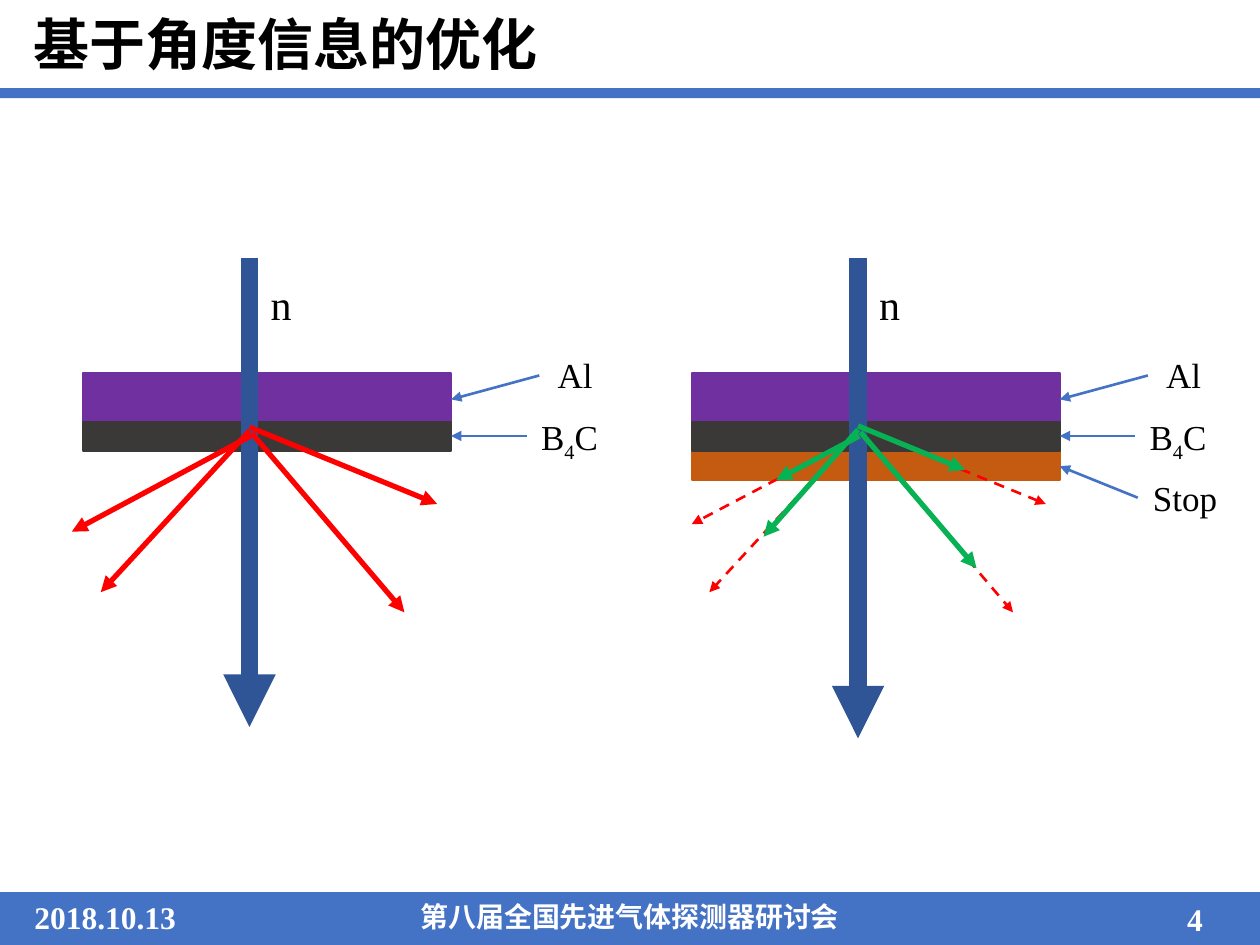
from lxml import etree
from pptx import Presentation
from pptx.dml.color import RGBColor
from pptx.enum.dml import MSO_LINE
from pptx.enum.shapes import MSO_CONNECTOR as CONN, MSO_SHAPE as SHAPE
from pptx.enum.text import PP_ALIGN as ALIGN
from pptx.oxml.ns import qn
from pptx.util import Inches, Pt


class Theme:
    latin, east_asian = "Times New Roman", "Noto Sans CJK SC"
    bar, beam, ray, stopped = "4472C4", "2F5597", "FF0000", "06B254"
    al, b4c, stop = "7030A0", "3B3838", "C55A11"
    ink, paper = "000000", "FFFFFF"
    title, neutron, label, footer, meeting = 32, 24, 20, 18, 16
    beam_w, ray_w, thin_w, edge_w = 10, 3, 1.5, 1


# Content: boxes are left, top, width, height
TITLE = ("基于角度信息的优化", (0.17, 0.03, 4.34, 0.64))
BARS = [(0, 0.7, 10, 0.08), (0, 7.08, 10, 0.44)]
FOOTER = [
    ("2018.10.13", (0.13, 7.08, 1.41, 0.4), Theme.footer),
    ("第八届全国先进气体探测器研讨会", (3.15, 7.09, 3.7, 0.37), Theme.meeting),
    ("4", (9.08, 7.09, 0.81, 0.4), Theme.footer),
]

# Both panels share these; coordinates are those of the left panel
LAYER_LEFT, LAYER_WIDTH, BEAM_X, BEAM_TOP = 0.66, 2.92, 1.98, 2.05
AL = (2.96, 0.41, Theme.al)  # top, height, colour
B4C = (3.35, 0.23, Theme.b4c)
STOP = (3.58, 0.23, Theme.stop)
NEUTRON = ("n", (2.05, 2.16, 0.46, 0.5))
LABELS = [  # text, box, pointer start, pointer end
    ("B4C", (4.18, 3.25, 0.68, 0.44), (4.18, 3.46), (3.58, 3.46)),
    ("Al", (4.28, 2.76, 0.57, 0.44), (4.28, 2.98), (3.58, 3.17)),
]
STOP_LABEL = ("Stop", (4.2, 3.73, 0.75, 0.44), (4.2, 3.95), (3.58, 3.7))
RAYS = [
    ((2, 3.44), (3.21, 4.86)),
    ((1.98, 3.39), (3.47, 4)),
    ((1.98, 3.42), (0.8, 4.7)),
]
STOPPED_RAYS = [
    ((2, 3.43), (2.92, 4.51)),
    ((1.98, 3.38), (2.83, 3.73)),
    ((1.98, 3.41), (1.23, 4.26)),
    ((1.99, 3.46), (1.33, 3.81)),
]
FLAT_RAY = (1.99, 3.46)
PANELS = [
    dict(dx=0, layers=[AL, B4C], beam_end=5.77, labels=LABELS,
         rays=RAYS + [(FLAT_RAY, (0.57, 4.22))], dashed=False, stopped=[]),
    dict(dx=4.83, layers=[STOP, AL, B4C], beam_end=5.86,
         labels=LABELS + [STOP_LABEL],
         rays=RAYS + [(FLAT_RAY, (0.66, 4.16))], dashed=True,
         stopped=STOPPED_RAYS),
]


def rgb(color):
    return RGBColor.from_string(color)


def add_rect(shapes, box, color, edge=None):
    s = shapes.add_shape(SHAPE.RECTANGLE, *map(Inches, box))
    s.shadow.inherit = False
    s.fill.solid()
    s.fill.fore_color.rgb = rgb(color)
    if edge:
        s.line.color.rgb = rgb(color)
        s.line.width = Pt(edge)
    else:
        s.line.fill.background()


def add_text(shapes, text, box, size, color=Theme.ink, bold=False, align=ALIGN.CENTER):
    tf = shapes.add_textbox(*map(Inches, box)).text_frame
    tf.word_wrap = True
    p = tf.paragraphs[0]
    p.alignment = align
    for part in ("B", "4", "C") if text == "B4C" else (text,):
        r = p.add_run()
        r.text = part
        r.font.size, r.font.bold, r.font.name = Pt(size), bold, Theme.latin
        r.font.color.rgb = rgb(color)
        rPr = r.font._element
        etree.SubElement(rPr, qn("a:ea"), typeface=Theme.east_asian)
        if text == "B4C" and part == "4":
            rPr.set("baseline", "-25000")


def add_arrow(shapes, start, end, color, width, dashed=False):
    s = shapes.add_connector(CONN.STRAIGHT, *map(Inches, (*start, *end)))
    s.line.color.rgb = rgb(color)
    s.line.width = Pt(width)
    if dashed:
        s.line.dash_style = MSO_LINE.DASH
    etree.SubElement(s.line._get_or_add_ln(), qn("a:tailEnd"), type="triangle")
    etree.SubElement(s._element.spPr, qn("a:effectLst"))


def add_panel(slide, panel):
    shapes = slide.shapes.add_group_shape().shapes
    dx = panel["dx"]

    def moved(place):
        return (place[0] + dx, *place[1:])

    # Layers and neutron beam
    for top, height, color in panel["layers"]:
        add_rect(shapes, moved((LAYER_LEFT, top, LAYER_WIDTH, height)), color, Theme.edge_w)
    add_arrow(shapes, moved((BEAM_X, BEAM_TOP)), moved((BEAM_X, panel["beam_end"])),
              Theme.beam, Theme.beam_w)
    text, box = NEUTRON
    add_text(shapes, text, moved(box), Theme.neutron, align=ALIGN.LEFT)

    # Emitted rays
    width = Theme.thin_w if panel["dashed"] else Theme.ray_w
    for start, end in panel["rays"]:
        add_arrow(shapes, moved(start), moved(end), Theme.ray, width, panel["dashed"])

    # Labels with pointers
    for text, box, start, end in panel["labels"]:
        add_text(shapes, text, moved(box), Theme.label)
        add_arrow(shapes, moved(start), moved(end), Theme.bar, Theme.thin_w)

    # Shortened rays
    for start, end in panel["stopped"]:
        add_arrow(shapes, moved(start), moved(end), Theme.stopped, Theme.ray_w)


def main():
    prs = Presentation()
    prs.slide_width, prs.slide_height = Inches(10), Inches(7.5)
    slide = prs.slides.add_slide(prs.slide_layouts[6])

    # Bars, footer and title
    for box in BARS:
        add_rect(slide.shapes, box, Theme.bar)
    for text, box, size in FOOTER:
        add_text(slide.shapes, text, box, size, Theme.paper, bold=True)
    add_text(slide.shapes, *TITLE, Theme.title, bold=True, align=ALIGN.LEFT)

    for panel in PANELS:
        add_panel(slide, panel)
    prs.save("out.pptx")


if __name__ == "__main__":
    main()
